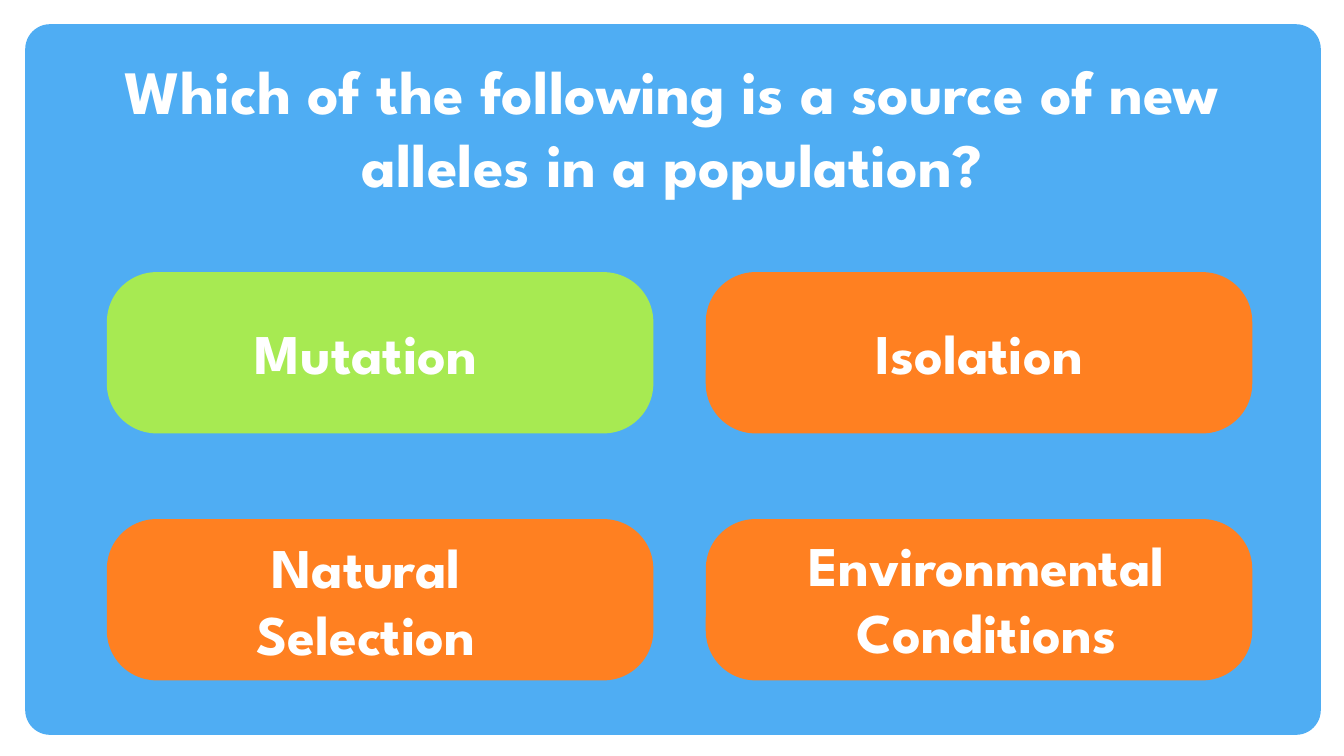
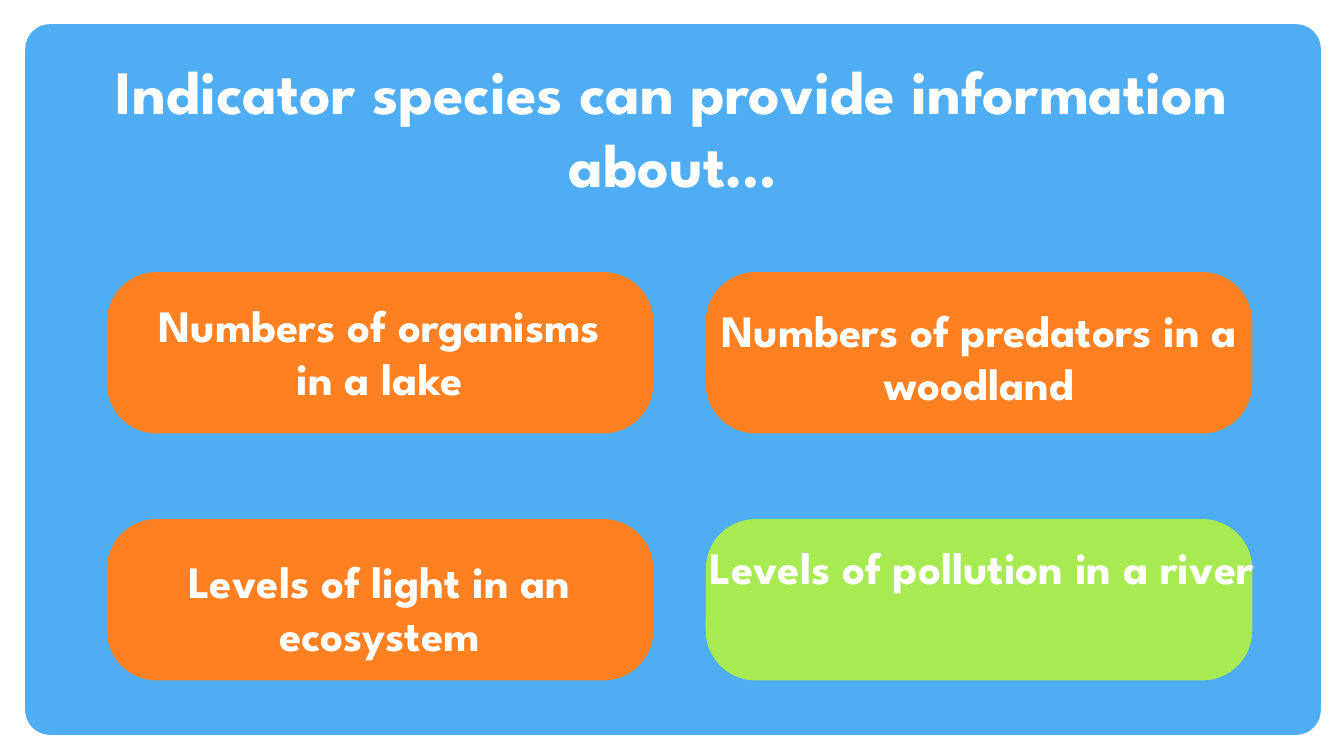
from pptx import Presentation
from pptx.dml.color import RGBColor
from pptx.enum.shapes import MSO_SHAPE
from pptx.enum.text import MSO_ANCHOR, MSO_AUTO_SIZE, PP_ALIGN
from pptx.util import Inches, Pt

ROUNDED = MSO_SHAPE.ROUNDED_RECTANGLE
CENTER = PP_ALIGN.CENTER
TOP = MSO_ANCHOR.TOP
GROW = MSO_AUTO_SIZE.SHAPE_TO_FIT_TEXT

# Content: answers run row by row; each has its text and label box (inches)
QUESTIONS = [
    {
        "title": "Which of the following is a source of new alleles in a population?",
        "correct": 0,
        "size": 40,
        "answers": [
            ("Mutation", (1.89, 3.11, 3.48, 0.77)),
            ("Isolation", (7.97, 3.11, 3.48, 0.77)),
            ("Natural Selection", (1.89, 5.23, 3.48, 1.45)),
            ("Environmental Conditions", (7.3, 5.21, 4.97, 1.45)),
        ],
    },
    {
        "title": "Indicator species can provide information about…",
        "correct": 3,
        "size": 32,
        "answers": [
            ("Numbers of organisms in a lake", (1.31, 2.9, 4.91, 1.18)),
            ("Numbers of predators in a woodland", (7, 2.95, 5.43, 1.18)),
            ("Levels of light in an ecosystem", (1.31, 5.44, 4.91, 1.18)),
            ("Levels of pollution in a river", (6.8, 5.3, 5.88, 1.18)),
        ],
    },
]

# Shared style
COLORS = {"panel": "4FADF3", "answer": "FF8021", "correct": "A7EA52", "text": "FFFFFF"}
FONT = "League Spartan"
TITLE_SIZE = 44
SLIDE_W, SLIDE_H = 13.33, 7.5
PANEL = (0.25, 0.24, 12.85, 7.05)
TITLE_BOX = (0.46, 0.47, 12.42, 1.58)

# Answer grid
COLUMNS = 2
TILE_W, TILE_H = 5.42, 1.6
GRID_LEFT, GRID_TOP = 1.06, 2.7
COLUMN_STEP, ROW_STEP = 5.94, 2.45


def add_rounded(s, box, color, radius):
    sp = s.shapes.add_shape(ROUNDED, *map(Inches, box))
    sp.adjustments[0] = radius
    sp.shadow.inherit = False
    sp.fill.solid()
    sp.fill.fore_color.rgb = RGBColor.from_string(COLORS[color])
    sp.line.fill.background()
    return sp


def write(sp, text, size):
    tf = sp.text_frame
    tf.word_wrap = True
    tf.auto_size = GROW
    tf.vertical_anchor = TOP
    p = tf.paragraphs[0]
    p.alignment = CENTER
    r = p.add_run()
    r.text = text
    r.font.name = FONT
    r.font.size = Pt(size)
    r.font.bold = True
    r.font.color.rgb = RGBColor.from_string(COLORS["text"])


def add_title(s, text):
    title = s.shapes.title
    title.left, title.top, title.width, title.height = map(Inches, TITLE_BOX)
    write(title, text, TITLE_SIZE)


def add_question(prs, question):
    s = prs.slides.add_slide(prs.slide_layouts[5])

    # Panel goes behind the title
    panel = add_rounded(s, PANEL, "panel", 0.035)
    s.shapes.title.element.addprevious(panel.element)
    add_title(s, question["title"])

    # Answer tiles
    for i in range(len(question["answers"])):
        row, column = divmod(i, COLUMNS)
        box = (GRID_LEFT + column * COLUMN_STEP, GRID_TOP + row * ROW_STEP, TILE_W, TILE_H)
        add_rounded(s, box, "correct" if i == question["correct"] else "answer", 0.309)

    # Answer labels
    for text, box in question["answers"]:
        write(s.shapes.add_textbox(*map(Inches, box)), text, question["size"])


def main():
    prs = Presentation()
    prs.slide_width, prs.slide_height = Inches(SLIDE_W), Inches(SLIDE_H)
    for question in QUESTIONS:
        add_question(prs, question)
    prs.save("out.pptx")


if __name__ == "__main__":
    main()
